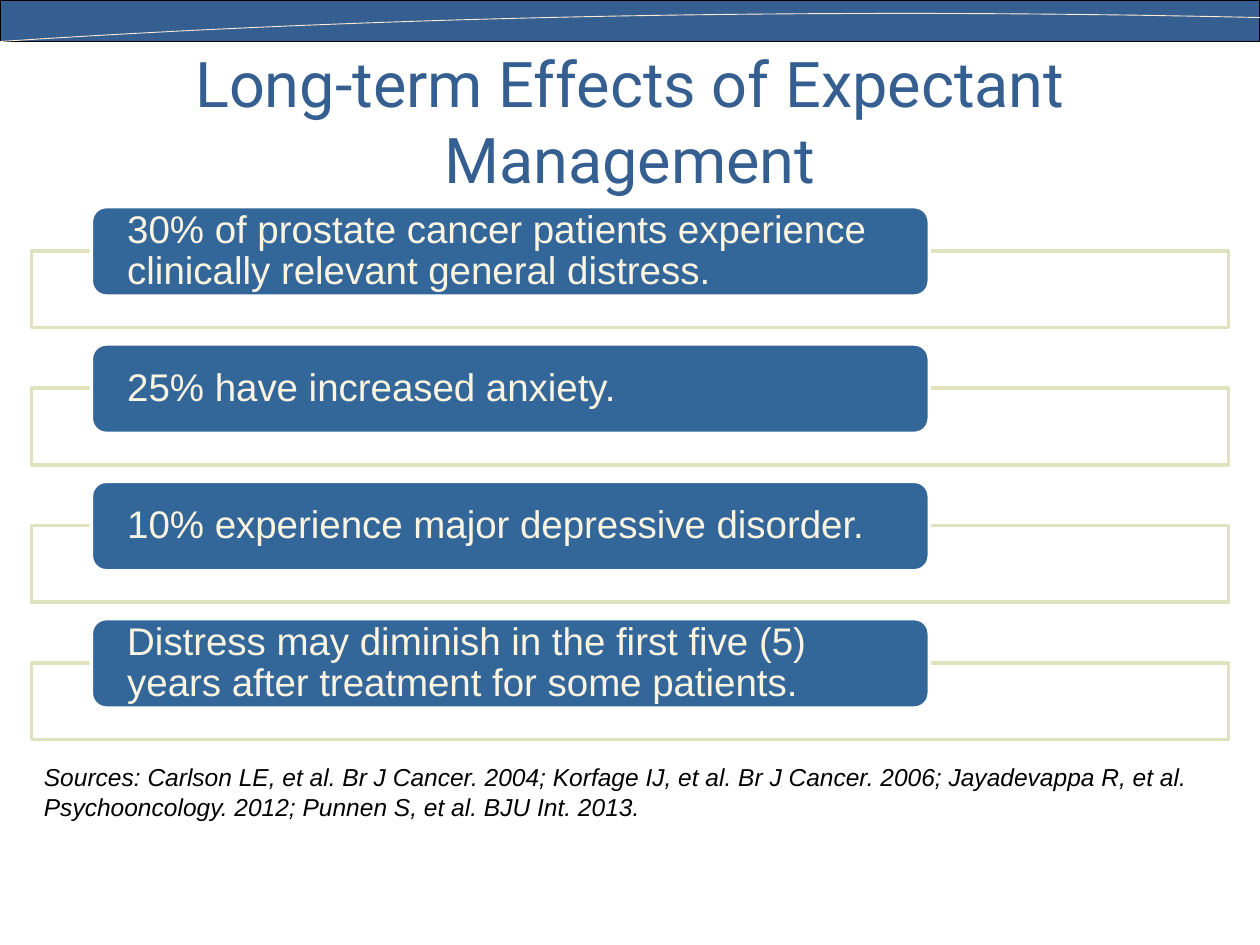
from dataclasses import dataclass

from lxml.etree import SubElement
from pptx import Presentation
from pptx.dml.color import RGBColor
from pptx.enum.shapes import MSO_SHAPE
from pptx.enum.text import MSO_ANCHOR, MSO_AUTO_SIZE, PP_ALIGN
from pptx.oxml.ns import qn
from pptx.shapes.autoshape import Shape
from pptx.slide import Slide
from pptx.text.text import TextFrame
from pptx.util import Inches, Pt


@dataclass(frozen=True)
class Theme:
    banner: str = "365F91"
    swoosh: str = "FFEAD5"
    label: str = "336699"
    label_text: str = "FBF4E1"
    frame: str = "E0E1BD"
    white: str = "FFFFFF"
    black: str = "000000"
    title_font: str = "Roboto"
    body_font: str = "Arial"
    title_size: int = 36
    label_size: int = 22
    source_size: int = 14


@dataclass(frozen=True)
class Finding:
    text: str
    top: float


THEME = Theme()
FIRST_TOP, PITCH = 1.64, 1.09
FRAME_LEFT, FRAME_WIDTH = 0.25, 9.5
LABEL_LEFT, LABEL_WIDTH = FRAME_LEFT + 0.05 * FRAME_WIDTH, 0.7 * FRAME_WIDTH
FINDINGS = [
    Finding(text, FIRST_TOP + row * PITCH)
    for row, text in enumerate([
        "30% of prostate cancer patients experience clinically relevant general distress.",
        "25% have increased anxiety.",
        "10% experience major depressive disorder.",
        "Distress may diminish in the first five (5) years after treatment for some patients.",
    ])
]
SOURCES = (
    "Sources: Carlson LE, et al. Br J Cancer. 2004; Korfage IJ, et al. Br J Cancer. 2006; "
    "Jayadevappa R, et al. Psychooncology. 2012; Punnen S, et al. BJU Int. 2013."
)
SWOOSH_CURVE = [(10, 0.14), (7.44, 0.08), (3.79, 0.08), (0, 0.33)]
SWOOSH_STEPS = 40


def write(frame: TextFrame, text: str, font: str, size: int, color: str,
          align: PP_ALIGN = PP_ALIGN.LEFT, italic: bool = False) -> None:
    frame.text = text
    frame.word_wrap = True
    paragraph = frame.paragraphs[0]
    paragraph.alignment = align
    run_font = paragraph.runs[0].font
    run_font.name = font
    run_font.size = Pt(size)
    run_font.italic = italic
    run_font.color.rgb = RGBColor.from_string(color)


def add_box(slide: Slide, kind: MSO_SHAPE, left: float, top: float, width: float,
            height: float, fill: str, line: str, line_width: float) -> Shape:
    box = slide.shapes.add_shape(
        kind, Inches(left), Inches(top), Inches(width), Inches(height))
    box.shadow.inherit = False
    box.fill.solid()
    box.fill.fore_color.rgb = RGBColor.from_string(fill)
    box.line.color.rgb = RGBColor.from_string(line)
    box.line.width = Pt(line_width)
    return box


def set_opacity(box: Shape, percent: int) -> None:
    color = box.fill._xPr.find(qn("a:solidFill"))[0]
    SubElement(color, qn("a:alpha"), val=str(percent * 1000))


def bezier_point(t: float) -> tuple[int, int]:
    """Return the point of the cubic swoosh curve at t, as slide lengths."""
    weights = ((1 - t) ** 3, 3 * t * (1 - t) ** 2, 3 * t ** 2 * (1 - t), t ** 3)
    x, y = (Inches(sum(w * point[axis] for w, point in zip(weights, SWOOSH_CURVE)))
            for axis in (0, 1))
    return x, y


def add_banner(slide: Slide) -> None:
    add_box(slide, MSO_SHAPE.RECTANGLE, 0, 0, 10, 0.33, THEME.banner, THEME.black, 0.75)
    start, *rest = [bezier_point(step / SWOOSH_STEPS) for step in range(SWOOSH_STEPS + 1)]
    builder = slide.shapes.build_freeform(*start)
    builder.add_line_segments(rest, close=False)
    swoosh = builder.convert_to_shape()
    swoosh.shadow.inherit = False
    swoosh.fill.background()
    swoosh.line.color.rgb = RGBColor.from_string(THEME.swoosh)
    swoosh.line.width = Pt(0.5)


def add_title(slide: Slide) -> None:
    title = slide.shapes.title
    title.left, title.top = Inches(0.5), Inches(0.33)
    title.width, title.height = Inches(9), Inches(1.25)
    title.text_frame.auto_size = MSO_AUTO_SIZE.NONE
    title.text_frame.vertical_anchor = MSO_ANCHOR.MIDDLE
    write(title.text_frame, "Long-term Effects of Expectant Management",
          THEME.title_font, THEME.title_size, THEME.banner, PP_ALIGN.CENTER)


def add_finding(slide: Slide, finding: Finding) -> None:
    frame = add_box(slide, MSO_SHAPE.RECTANGLE, FRAME_LEFT, finding.top + 0.35,
                    FRAME_WIDTH, 0.61, THEME.white, THEME.frame, 2)
    set_opacity(frame, 90)
    label = add_box(slide, MSO_SHAPE.ROUNDED_RECTANGLE, LABEL_LEFT, finding.top,
                    LABEL_WIDTH, 0.71, THEME.label, THEME.white, 2)
    content = label.text_frame
    content.margin_left = content.margin_right = Inches(0.25)
    content.margin_top = content.margin_bottom = 0
    content.vertical_anchor = MSO_ANCHOR.MIDDLE
    write(content, finding.text, THEME.body_font, THEME.label_size, THEME.label_text)
    content.paragraphs[0].line_spacing = 0.9


def add_sources(slide: Slide) -> None:
    sources = slide.shapes.add_textbox(Inches(0.25), Inches(6), Inches(9.58), Inches(0.57))
    write(sources.text_frame, SOURCES, THEME.body_font, THEME.source_size,
          THEME.black, italic=True)
    sources.text_frame.auto_size = MSO_AUTO_SIZE.SHAPE_TO_FIT_TEXT


def main() -> None:
    deck = Presentation()
    deck.slide_width, deck.slide_height = Inches(10), Inches(7.5)
    slide = deck.slides.add_slide(deck.slide_layouts.get_by_name("Title Only"))
    add_banner(slide)
    add_title(slide)
    for finding in FINDINGS:
        add_finding(slide, finding)
    add_sources(slide)
    deck.save("out.pptx")


if __name__ == "__main__":
    main()
